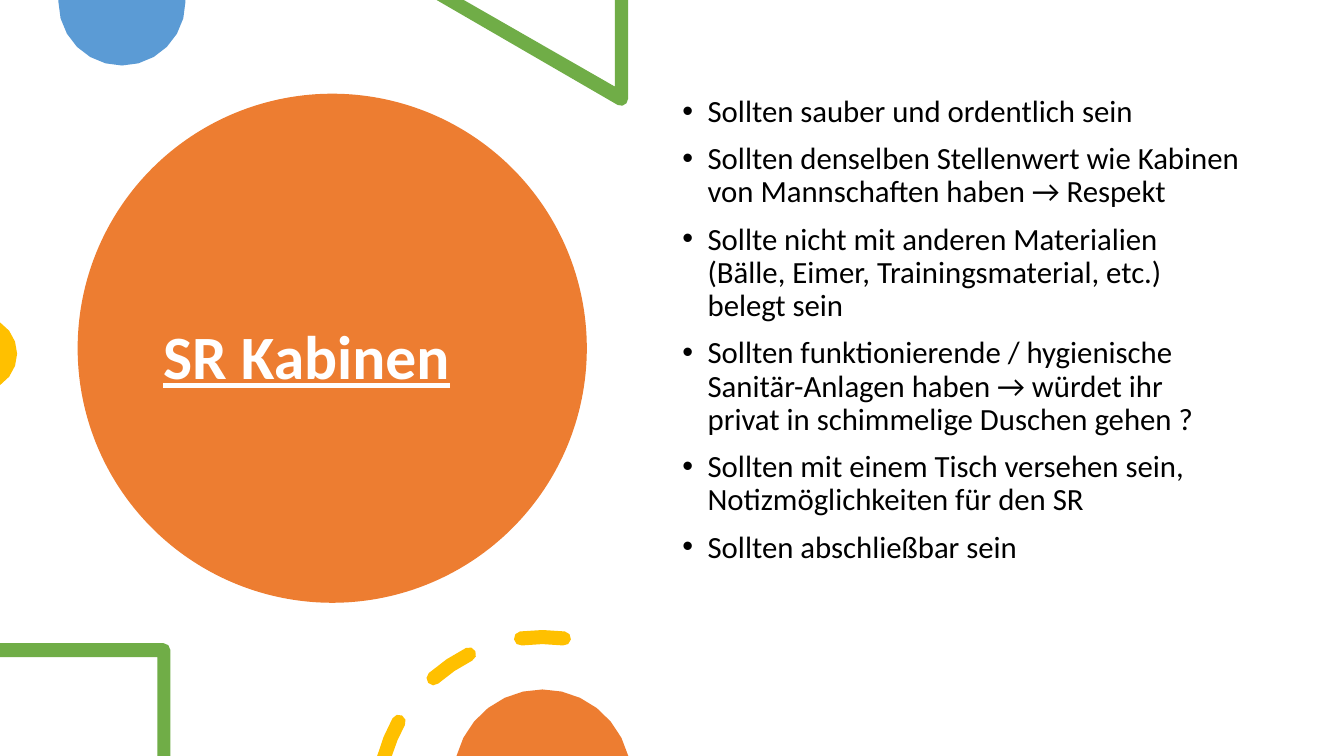
from math import acos, asin, ceil, cos, degrees, radians, sin

from lxml import etree
from pptx import Presentation
from pptx.dml.color import RGBColor
from pptx.enum.shapes import MSO_SHAPE
from pptx.enum.text import MSO_ANCHOR, PP_ALIGN
from pptx.oxml.ns import qn
from pptx.util import Inches, Pt

OVAL = MSO_SHAPE.OVAL
MIDDLE, TOP = MSO_ANCHOR.MIDDLE, MSO_ANCHOR.TOP
LEFT = PP_ALIGN.LEFT

WHITE = RGBColor(0xFF, 0xFF, 0xFF)
BLACK = RGBColor(0x00, 0x00, 0x00)
ORANGE = RGBColor(0xED, 0x7D, 0x31)
BLUE = RGBColor(0x5B, 0x9B, 0xD5)
GREEN = RGBColor(0x70, 0xAD, 0x47)
YELLOW = RGBColor(0xFF, 0xC0, 0x00)

WIDTH, HEIGHT = 13.33, 7.5
FLATNESS = 0.006  # largest gap between a circle and its chords
CORNER = 0.07  # half the thickness of every thick stroke
RING_X, RING_Y, RING_RADIUS = 5.38, 7.95, 1.63

BULLETS = [
    "Sollten sauber und ordentlich sein",
    "Sollten denselben Stellenwert wie Kabinen von Mannschaften haben → Respekt",
    "Sollte nicht mit anderen Materialien (Bälle, Eimer, Trainingsmaterial, etc.) belegt sein",
    "Sollten funktionierende / hygienische Sanitär-Anlagen haben → würdet ihr privat in "
    "schimmelige Duschen gehen ?",
    "Sollten mit einem Tisch versehen sein, Notizmöglichkeiten für den SR",
    "Sollten abschließbar sein",
]


def arc(x, y, radius, start, end):
    """Points on a circle; degrees run clockwise from the right."""
    widest_step = 2 * degrees(acos(1 - FLATNESS / radius))
    steps = max(1, ceil(abs(end - start) / widest_step))
    angles = [radians(start + (end - start) * i / steps) for i in range(steps + 1)]
    return [(x + radius * cos(a), y + radius * sin(a)) for a in angles]


def ring_arc(radius, start, end):
    return arc(RING_X, RING_Y, radius, start, end)


def ring_cap(angle, turn):
    """Inner points of a dash's round end, centred on the ring at the given angle."""
    x, y = ring_arc(RING_RADIUS, angle, angle)[0]
    return arc(x, y, CORNER, turn, turn + 180)[1:-1]


def ring_dash(start, end):
    """Outline of one dash; without a start it is cut off by the slide's lower edge."""
    outer, inner = RING_RADIUS + CORNER, RING_RADIUS - CORNER
    cut = start is None
    outer_start, inner_start = [
        180 + degrees(asin((RING_Y - HEIGHT) / radius)) if cut else start
        for radius in (outer, inner)
    ]
    points = ring_arc(outer, outer_start, end) + ring_cap(end, end)
    points += ring_arc(inner, end, inner_start)
    return points if cut else points + ring_cap(start, start + 180)


class SlideBuilder:
    font_name = "Calibri"

    def __init__(self, deck):
        self.slide = deck.slides.add_slide(deck.slide_layouts[6])
        self.slide.background.fill.solid()
        self.slide.background.fill.fore_color.rgb = WHITE

    def paint(self, shape, color):
        shape.shadow.inherit = False
        shape.fill.solid()
        shape.fill.fore_color.rgb = color
        shape.line.fill.background()

    def circle(self, left, top, size, color):
        shape = self.slide.shapes.add_shape(
            OVAL, Inches(left), Inches(top), Inches(size), Inches(size))
        self.paint(shape, color)

    def outline(self, color, *contours):
        """Filled shape made of one or more closed contours."""
        builder = None
        for contour in contours:
            first, *rest = [(Inches(x), Inches(y)) for x, y in contour]
            if builder is None:
                builder = self.slide.shapes.build_freeform(*first)
            else:
                builder.move_to(*first)
            builder.add_line_segments(rest, close=True)
        self.paint(builder.convert_to_shape(), color)

    def text(self, left, top, width, height, lines, size, color, anchor):
        box = self.slide.shapes.add_textbox(
            Inches(left), Inches(top), Inches(width), Inches(height))
        frame = box.text_frame
        frame.word_wrap = True
        frame.vertical_anchor = anchor
        frame.text = "\n".join(lines)
        for para in frame.paragraphs:
            para.alignment = LEFT
            para.line_spacing = 0.9
            para.font.name = self.font_name
            para.font.size = Pt(size)
            para.font.color.rgb = color
        return frame.paragraphs

    def title(self, left, top, width, height, line):
        for para in self.text(left, top, width, height, [line], 44, WHITE, MIDDLE):
            para.font.bold = True
            para.font.underline = True

    def bullets(self, left, top, width, height, lines):
        for para in self.text(left, top, width, height, lines, 22, BLACK, TOP):
            para.space_before = Pt(10)
            properties = para._p.get_or_add_pPr()
            properties.set("marL", str(Inches(0.25)))
            properties.set("indent", str(Inches(-0.25)))
            font = etree.Element(qn("a:buFont"), typeface="Arial")
            bullet = etree.Element(qn("a:buChar"), char="•")
            properties.find(qn("a:spcBef")).addnext(font)
            font.addnext(bullet)


def main():
    deck = Presentation()
    deck.slide_width, deck.slide_height = Inches(WIDTH), Inches(HEIGHT)
    page = SlideBuilder(deck)

    page.circle(0.77, 0.93, 5.05, ORANGE)
    page.title(1.52, 1.34, 3.54, 4.45, "SR Kabinen")

    page.outline(BLUE, [(1.84, 0), (0.58, 0)] + arc(1.21, 0.02, 0.63, 180, 0))
    page.outline(GREEN, [(6.23, 0), (6.1, 0), (6.1, 0.86), (4.6, 0), (4.33, 0)]
                 + arc(6.16, 0.98, CORNER, 118, 0))
    page.outline(YELLOW, arc(-0.2, 3.51, 0.37, -57, 57))

    page.bullets(6.67, 0.9, 5.72, 5.35, BULLETS)

    page.outline(GREEN, [(0, 6.38), (0, 6.52), (1.56, 6.52), (1.56, HEIGHT), (1.69, HEIGHT)]
                 + arc(1.62, 6.45, CORNER, 0, -90))
    page.outline(YELLOW, ring_dash(None, 209), ring_dash(228.5, 243.5), ring_dash(262.5, 277.5))
    page.outline(ORANGE, arc(5.38, 7.72, 0.88, 194.5, 345.5))

    deck.save("out.pptx")


if __name__ == "__main__":
    main()
